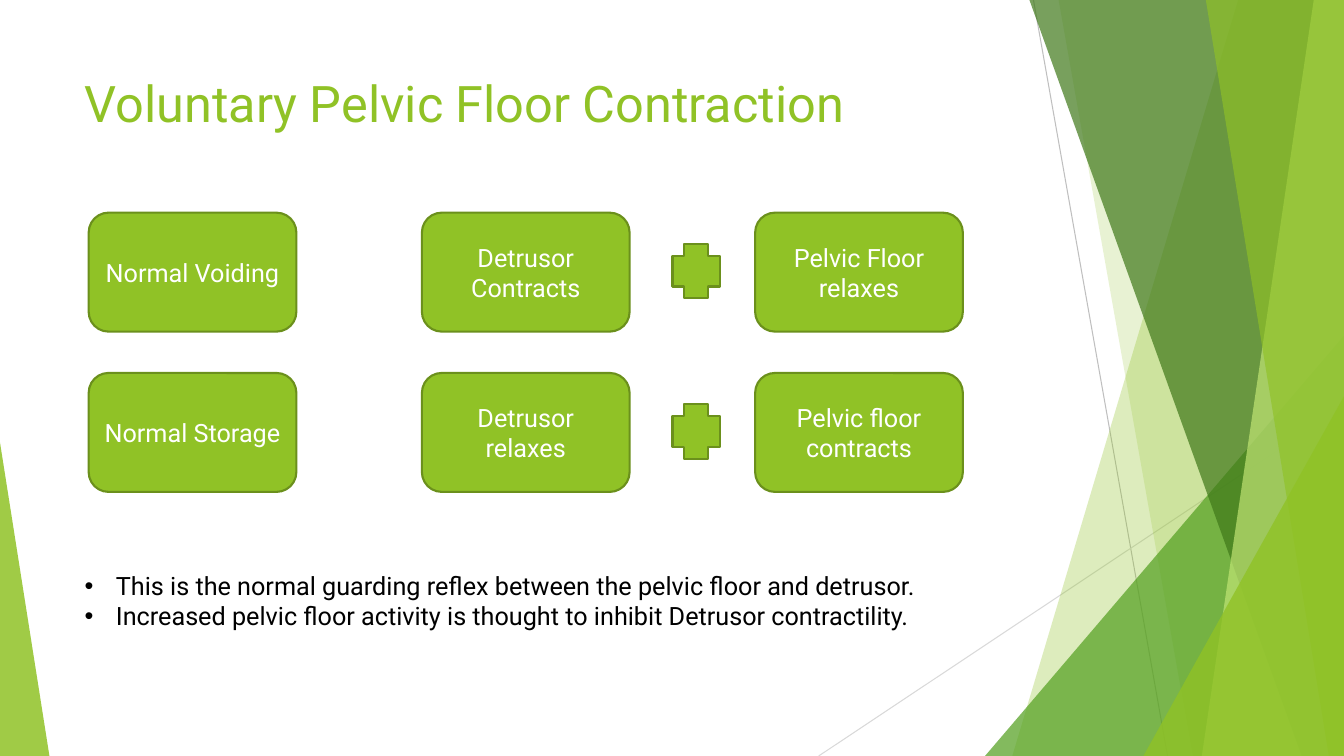
from lxml import etree
from pptx import Presentation
from pptx import util as u
from pptx.dml import color
from pptx.enum import shapes, text
from pptx.oxml import ns

WIDTH, HEIGHT = 13.33, 7.5
COLORS = {
    "lime": "90C226", "edge": "6B901C", "green": "54A021", "forest": "3F7819",
    "pale": "C0E474", "gray": "BFBFBF", "silver": "D9D9D9",
    "white": "FFFFFF", "black": "000000",
}
GRID = {"left": 0.88, "top": 2.11, "column": 3.305, "row": 1.59}
BOX = (2.06, 1.18)
PLUS = (0.47, 0.54)
PLUS_OFFSET = (2.485, 0.31)
ROWS = [
    ("Normal Voiding", "Detrusor Contracts", "Pelvic Floor relaxes"),
    ("Normal Storage", "Detrusor relaxes", "Pelvic floor contracts"),
]
NOTES_ON_REFLEX = [
    "This is the normal guarding reflex between the pelvic floor and detrusor.",
    "Increased pelvic floor activity is thought to inhibit Detrusor contractility.",
]
RAYS = [
    ((10.25, 0), (11.58, HEIGHT), "gray"),
    ((WIDTH, 4.03), (8.12, HEIGHT), "silver"),
]
FACETS = [
    ("band", 12.28, 10.04, "lime", 30),
    ("band", 10.5, 11.83, "lime", 20),
    ("triangle", 9.77, 3.56, 4.17, 1, "green", 72),
    ("band", 10.21, 12.91, "forest", 70),
    ("band", 13.03, 11.92, "pale", 70),
    ("band", 11.96, 13.18, "lime", 65),
    ("triangle", 11.34, 1.99, 3.57, 1, "lime", 80),
    ("triangle", 0, 0.49, 3.11, 0, "lime", 85),
]


def rgb(name):
    return color.RGBColor.from_string(COLORS[name])


def apply_format(target, values):
    for name, value in values.items():
        setattr(target, name, value)


def place(shape, left, top, width, height):
    lengths = dict(left=left, top=top, width=width, height=height)
    apply_format(shape, {name: u.Inches(value) for name, value in lengths.items()})


def paint(shape, fill, line=None, opacity=100):
    shape.shadow.inherit = False
    shape.fill.solid()
    shape.fill.fore_color.rgb = rgb(fill)
    if opacity < 100:
        tint = shape.fill._xPr.find(".//" + ns.qn("a:srgbClr"))
        etree.SubElement(tint, ns.qn("a:alpha"), val=str(opacity * 1000))
    if line:
        shape.line.color.rgb = rgb(line)
        shape.line.width = u.Pt(1.5)
    else:
        shape.line.fill.background()


def add_preset(slide, kind, left, top, width, height):
    return slide.shapes.add_shape(kind, *map(u.Inches, (left, top, width, height)))


def add_ray(slide, start, end, line):
    ray = slide.shapes.add_connector(
        shapes.MSO_CONNECTOR.STRAIGHT, *map(u.Inches, start + end))
    ray.line.color.rgb = rgb(line)
    ray.line.width = u.Pt(0.75)
    etree.SubElement(ray._element.spPr, ns.qn("a:effectLst"))


def add_band(slide, top_x, bottom_x, fill, opacity):
    corners = [(top_x, 0), (WIDTH, 0), (WIDTH, HEIGHT), (bottom_x, HEIGHT)]
    points = [(u.Inches(x), u.Inches(y)) for x, y in corners]
    builder = slide.shapes.build_freeform(*points[0])
    builder.add_line_segments(points[1:], close=True)
    paint(builder.convert_to_shape(), fill, opacity=opacity)


def add_triangle(slide, left, width, height, apex, fill, opacity):
    triangle = add_preset(slide, shapes.MSO_SHAPE.ISOSCELES_TRIANGLE,
                          left, HEIGHT - height, width, height)
    triangle.adjustments[0] = apex
    paint(triangle, fill, opacity=opacity)


def write(frame, lines, size, fill, frame_format, paragraph_format):
    apply_format(frame, {"word_wrap": True, **frame_format})
    frame.text = "\n".join(lines)
    for paragraph in frame.paragraphs:
        apply_format(paragraph, paragraph_format)
        for run in paragraph.runs:
            apply_format(run.font, {"name": "Roboto", "size": u.Pt(size)})
            run.font.color.rgb = rgb(fill)


def add_box(slide, label, left, top):
    box = add_preset(slide, shapes.MSO_SHAPE.ROUNDED_RECTANGLE, left, top, *BOX)
    paint(box, "lime", "edge")
    write(box.text_frame, [label], 18, "white",
          {"vertical_anchor": text.MSO_ANCHOR.MIDDLE},
          {"alignment": text.PP_ALIGN.CENTER})


def add_plus(slide, left, top):
    plus = add_preset(slide, shapes.MSO_SHAPE.CROSS, left, top, *PLUS)
    paint(plus, "lime", "edge")


def add_row(slide, index, labels):
    top = GRID["top"] + index * GRID["row"]
    for column, label in enumerate(labels):
        add_box(slide, label, GRID["left"] + column * GRID["column"], top)
    add_plus(slide, GRID["left"] + GRID["column"] + PLUS_OFFSET[0],
             top + PLUS_OFFSET[1])


def fill_placeholders(slide):
    top_left = {"vertical_anchor": text.MSO_ANCHOR.TOP,
                "auto_size": text.MSO_AUTO_SIZE.NONE}
    left = {"alignment": text.PP_ALIGN.LEFT}
    title, body = slide.shapes.title, slide.placeholders[1]
    place(title, 0.74, 0.67, 9.4, 1.44)
    write(title.text_frame, ["Voluntary Pelvic Floor Contraction"], 36, "lime",
          top_left, left)
    place(body, 0.74, 5.61, 9.28, 0.71)
    write(body.text_frame, NOTES_ON_REFLEX, 18, "black", top_left,
          {**left, "space_before": u.Pt(0)})
    indent = u.Inches(0.31)
    for paragraph in body.text_frame.paragraphs:
        properties = paragraph._p.get_or_add_pPr()
        properties.set("marL", str(indent))
        properties.set("indent", str(-indent))


def main():
    presentation = Presentation()
    presentation.slide_width = u.Inches(WIDTH)
    presentation.slide_height = u.Inches(HEIGHT)
    slide = presentation.slides.add_slide(presentation.slide_layouts[1])
    for ray in RAYS:
        add_ray(slide, *ray)
    draw = {"band": add_band, "triangle": add_triangle}
    for kind, *facet in FACETS:
        draw[kind](slide, *facet)
    fill_placeholders(slide)
    for index, labels in enumerate(ROWS):
        add_row(slide, index, labels)
    presentation.save("out.pptx")


if __name__ == "__main__":
    main()
